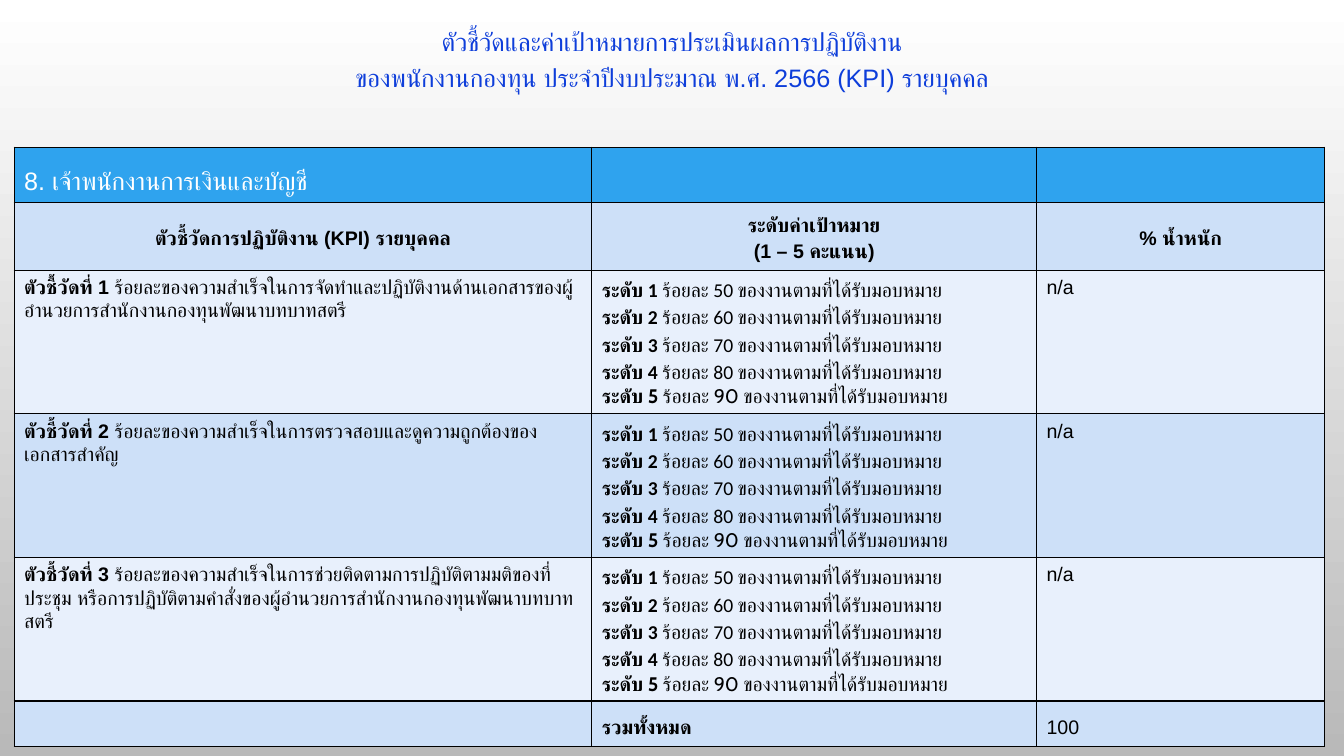
import pptx
import pptx.util
import pptx.dml.color
import pptx.enum.text
from lxml import etree
from pptx.oxml.ns import qn

Inches, Pt = pptx.util.Inches, pptx.util.Pt
RGBColor = pptx.dml.color.RGBColor
PP_ALIGN = pptx.enum.text.PP_ALIGN
MSO_ANCHOR = pptx.enum.text.MSO_ANCHOR

WHITE = RGBColor(0xFF, 0xFF, 0xFF)
BLACK = RGBColor(0x00, 0x00, 0x00)
GREY = RGBColor(0xB9, 0xB9, 0xB9)
TITLE_BLUE = RGBColor(0x0E, 0x3E, 0xDA)
HEAD_BLUE = RGBColor(0x2F, 0xA3, 0xEE)
MID_BLUE = RGBColor(0xCD, 0xE0, 0xF8)
PALE_BLUE = RGBColor(0xE8, 0xF0, 0xFC)


def write(tf, lines, spacing, size=14, color=BLACK, font="Arial", align=PP_ALIGN.LEFT):
    for i, runs in enumerate(lines):
        p = tf.paragraphs[0] if i == 0 else tf.add_paragraph()
        layout = {"alignment": align, "line_spacing": spacing,
                  "space_before": Pt(0), "space_after": Pt(0)}
        for name, value in layout.items():
            setattr(p, name, value)
        for text, bold in runs:
            r = p.add_run()
            r.text = text
            look = {"size": Pt(size), "bold": bold, "name": font}
            for name, value in look.items():
                setattr(r.font, name, value)
            r.font.color.rgb = color
            etree.SubElement(r.font._element, qn("a:cs"), typeface=font)


def style_cell(cell, color):
    cell.fill.solid()
    cell.fill.fore_color.rgb = color
    tcPr = cell._tc.get_or_add_tcPr()
    for i, side in enumerate(("lnL", "lnR", "lnT", "lnB")):
        ln = etree.Element(qn("a:" + side), w=str(Pt(1)))
        fill = etree.SubElement(ln, qn("a:solidFill"))
        etree.SubElement(fill, qn("a:srgbClr"), val=str(BLACK))
        tcPr.insert(i, ln)


prs = pptx.Presentation()
prs.slide_width, prs.slide_height = Inches(13.33), Inches(7.5)
s = prs.slides.add_slide(prs.slide_layouts[5])

bg = s.background.fill
bg.gradient()
bg.gradient_angle = 270
for stop, position, color in zip(bg.gradient_stops, (0, 1), (WHITE, GREY)):
    stop.position = position
    stop.color.rgb = color

title = s.shapes.title
title.left, title.top = 0, Inches(0.15)
title.width, title.height = prs.slide_width, Inches(1.23)
tf = title.text_frame
frame = {"word_wrap": True, "vertical_anchor": MSO_ANCHOR.TOP,
         "auto_size": pptx.enum.text.MSO_AUTO_SIZE.NONE}
for name, value in frame.items():
    setattr(tf, name, value)
write(tf, [[("ตัวชี้วัดและค่าเป้าหมายการประเมินผลการปฏิบัติงาน", False)],
           [("ของพนักงานกองทุน ประจำปีงบประมาณ พ.ศ. 2566 (KPI) รายบุคคล", False)]],
      1.2, 18, TITLE_BLUE, align=PP_ALIGN.CENTER)

widths = [5.73, 4.41, 2.86]
heights = [0.55, 0.67, 1.41, 1.41, 1.41, 0.45]
fills = [HEAD_BLUE, MID_BLUE, PALE_BLUE, MID_BLUE, PALE_BLUE, MID_BLUE]
table = s.shapes.add_table(len(heights), len(widths), Inches(0.14), Inches(1.46),
                           Inches(sum(widths)), Inches(sum(heights))).table
for column, width in zip(table.columns, widths):
    column.width = Inches(width)
for row, height, color in zip(table.rows, heights, fills):
    row.height = Inches(height)
    for cell in row.cells:
        style_cell(cell, color)

position = table.cell(0, 0)
position.vertical_anchor = MSO_ANCHOR.MIDDLE
write(position.text_frame, [[("8. เจ้าพนักงานการเงินและบัญชี", False)]], 1.5, 18, WHITE)

headings = [["ตัวชี้วัดการปฏิบัติงาน (KPI) รายบุคคล"],
            ["ระดับค่าเป้าหมาย", "(1 – 5 คะแนน)"],
            ["% น้ำหนัก"]]
for col, lines in enumerate(headings):
    cell = table.cell(1, col)
    cell.vertical_anchor = MSO_ANCHOR.MIDDLE
    write(cell.text_frame, [[(line, True)] for line in lines], 1.2, align=PP_ALIGN.CENTER)

indicators = [
    "ร้อยละของความสำเร็จในการจัดทำและปฏิบัติงานด้านเอกสารของผู้อำนวยการสำนักงานกองทุนพัฒนาบทบาทสตรี",
    "ร้อยละของความสำเร็จในการตรวจสอบและดูความถูกต้องของเอกสารสำคัญ",
    "ร้อยละของความสำเร็จในการช่วยติดตามการปฏิบัติตามมติของที่ประชุม "
    "หรือการปฏิบัติตามคำสั่งของผู้อำนวยการสำนักงานกองทุนพัฒนาบทบาทสตรี",
]
levels = [[(f"ระดับ {n} ", True), (f"ร้อยละ {40 + 10 * n} ของงานตามที่ได้รับมอบหมาย", False)]
          for n in range(1, 6)]
for n, indicator in enumerate(indicators, 1):
    kpi, target, weight = table.rows[n + 1].cells
    write(kpi.text_frame, [[(f"ตัวชี้วัดที่ {n} ", True), (indicator, False)]], Pt(16.8))
    write(target.text_frame, levels, 1.15, font="Calibri")
    top_level = target.text_frame.paragraphs[-1]
    top_level.line_spacing = 1.0
    for r in top_level.runs:
        r.font.name = "Cabin"
        r.font._element.find(qn("a:cs")).set("typeface", "Cabin")
    write(weight.text_frame, [[("n/a", False)]], Pt(16.8))

write(table.cell(5, 1).text_frame, [[("รวมทั้งหมด", True)]], 1.5)
write(table.cell(5, 2).text_frame, [[("100", False)]], 1.5)

prs.save("out.pptx")
